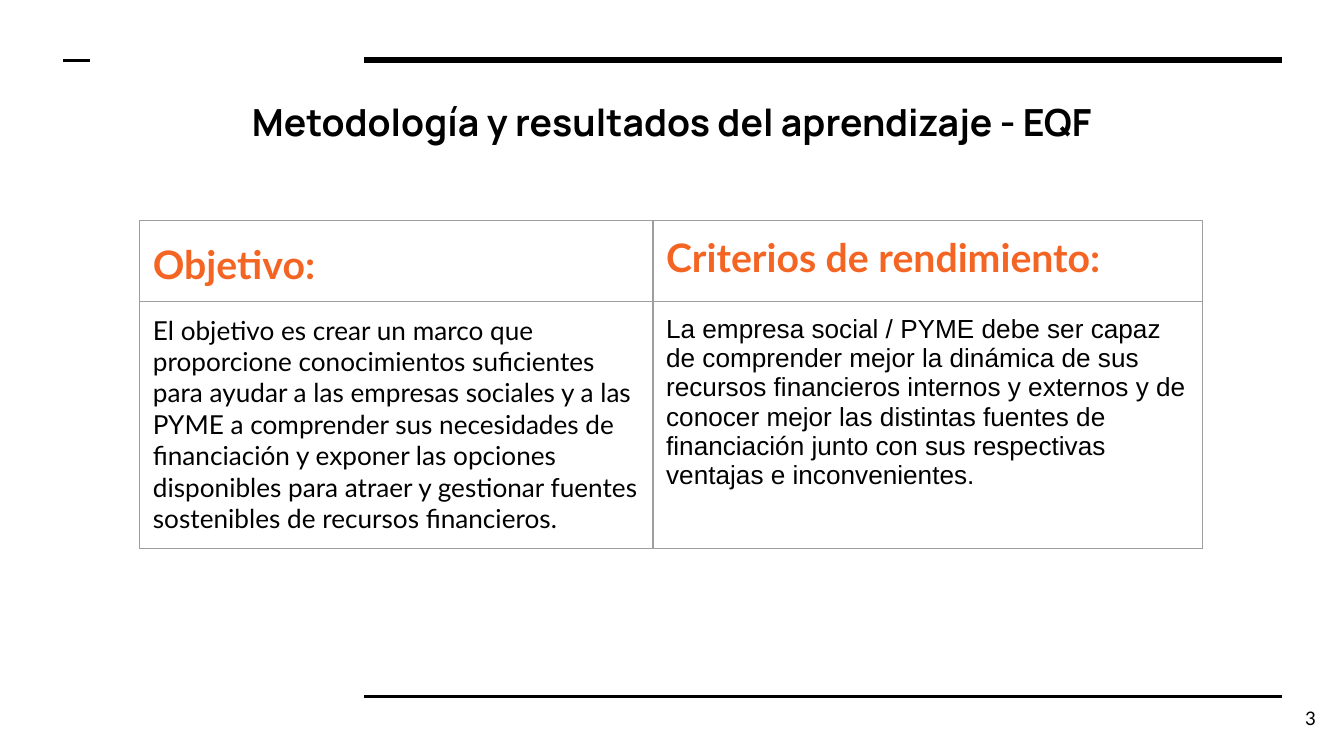
from lxml.etree import SubElement
from pptx import Presentation
from pptx.dml.color import RGBColor
from pptx.enum.shapes import MSO_CONNECTOR
from pptx.enum.text import MSO_ANCHOR, PP_ALIGN
from pptx.oxml.ns import qn
from pptx.util import Cm, Pt

BLACK = RGBColor(0x00, 0x00, 0x00)
ORANGE = RGBColor(0xF4, 0x65, 0x24)
GRAY = RGBColor(0x9E, 0x9E, 0x9E)


class SlideBuilder:
    font_name = "Lato"
    inset = Cm(0.25)
    border_width = Pt(0.75)

    def __init__(self, page):
        self.page = page

    def rule(self, left, right, top, weight):
        line = self.page.shapes.add_connector(
            MSO_CONNECTOR.STRAIGHT, Cm(left), Cm(top), Cm(right), Cm(top)
        )
        line.line.color.rgb = BLACK
        line.line.width = Pt(weight)
        SubElement(line._element.spPr, qn("a:effectLst"))

    def fill_para(self, para, text, size, color=BLACK, bold=False, font_name=None):
        para.text = text
        para.font.name = font_name or self.font_name
        para.font.size = Pt(size)
        para.font.color.rgb = color
        para.font.bold = bold

    def text(self, bounds, text, size, align, anchor=MSO_ANCHOR.TOP, **style):
        box = self.page.shapes.add_textbox(*map(Cm, bounds))
        frame = box.text_frame
        frame.word_wrap = True
        frame.vertical_anchor = anchor
        self.pad(frame)
        para = frame.paragraphs[0]
        para.alignment = align
        self.fill_para(para, text, size, **style)

    def pad(self, holder):
        holder.margin_left = holder.margin_right = self.inset
        holder.margin_top = holder.margin_bottom = self.inset

    def border(self, cell):
        properties = cell._tc.get_or_add_tcPr()
        for side in ("lnL", "lnR", "lnT", "lnB"):
            edge = SubElement(properties, qn(f"a:{side}"), w=str(self.border_width))
            fill = SubElement(edge, qn("a:solidFill"))
            SubElement(fill, qn("a:srgbClr"), val=str(GRAY))

    def table(self, left, top, widths, heights, rows):
        frame = self.page.shapes.add_table(
            len(heights), len(widths),
            Cm(left), Cm(top), Cm(sum(widths)), Cm(sum(heights)),
        )
        table = frame.table
        table.first_row = table.horz_banding = False
        for column, width in zip(table.columns, widths):
            column.width = Cm(width)
        for row, height, entries in zip(table.rows, heights, rows):
            row.height = Cm(height)
            for cell, (text, style) in zip(row.cells, entries):
                self.pad(cell)
                self.border(cell)
                cell.fill.background()
                self.fill_para(cell.text_frame.paragraphs[0], text, **style)
        return table


def main():
    deck = Presentation()
    deck.slide_width, deck.slide_height = Cm(25.4), Cm(14.29)
    page = deck.slides.add_slide(deck.slide_layouts[6])
    builder = SlideBuilder(page)

    builder.rule(6.88, 24.23, 1.14, 3)
    builder.rule(6.88, 24.23, 13.16, 1.5)
    builder.rule(1.19, 1.7, 1.14, 1.5)

    builder.text(
        (3.58, 1.63, 18.24, 1.75), "Metodología y resultados del aprendizaje - EQF",
        20, PP_ALIGN.CENTER, bold=True, font_name="Manrope",
    )

    heading = {"size": 21, "color": ORANGE, "bold": True}
    body = {"size": 14}
    rows = [
        [("Objetivo:", heading), ("Criterios de rendimiento:", heading)],
        [
            (
                "El objetivo es crear un marco que proporcione conocimientos "
                "suficientes para ayudar a las empresas sociales y a las PYME a "
                "comprender sus necesidades de financiación y exponer las opciones "
                "disponibles para atraer y gestionar fuentes sostenibles de "
                "recursos financieros.",
                body,
            ),
            (
                "La empresa social / PYME debe ser capaz de comprender mejor la "
                "dinámica de sus recursos financieros internos y externos y de "
                "conocer mejor las distintas fuentes de financiación junto con sus "
                "respectivas ventajas e inconvenientes.",
                {**body, "font_name": "Arial"},
            ),
        ],
    ]
    table = builder.table(2.64, 4.17, (9.7, 10.39), (1.52, 4.67), rows)
    table.cell(0, 0).text_frame.paragraphs[0].line_spacing = 1.15

    builder.text(
        (23.6, 13.03, 1.52, 1.09), "3", 10, PP_ALIGN.RIGHT, MSO_ANCHOR.MIDDLE
    )
    deck.save("out.pptx")


if __name__ == "__main__":
    main()
